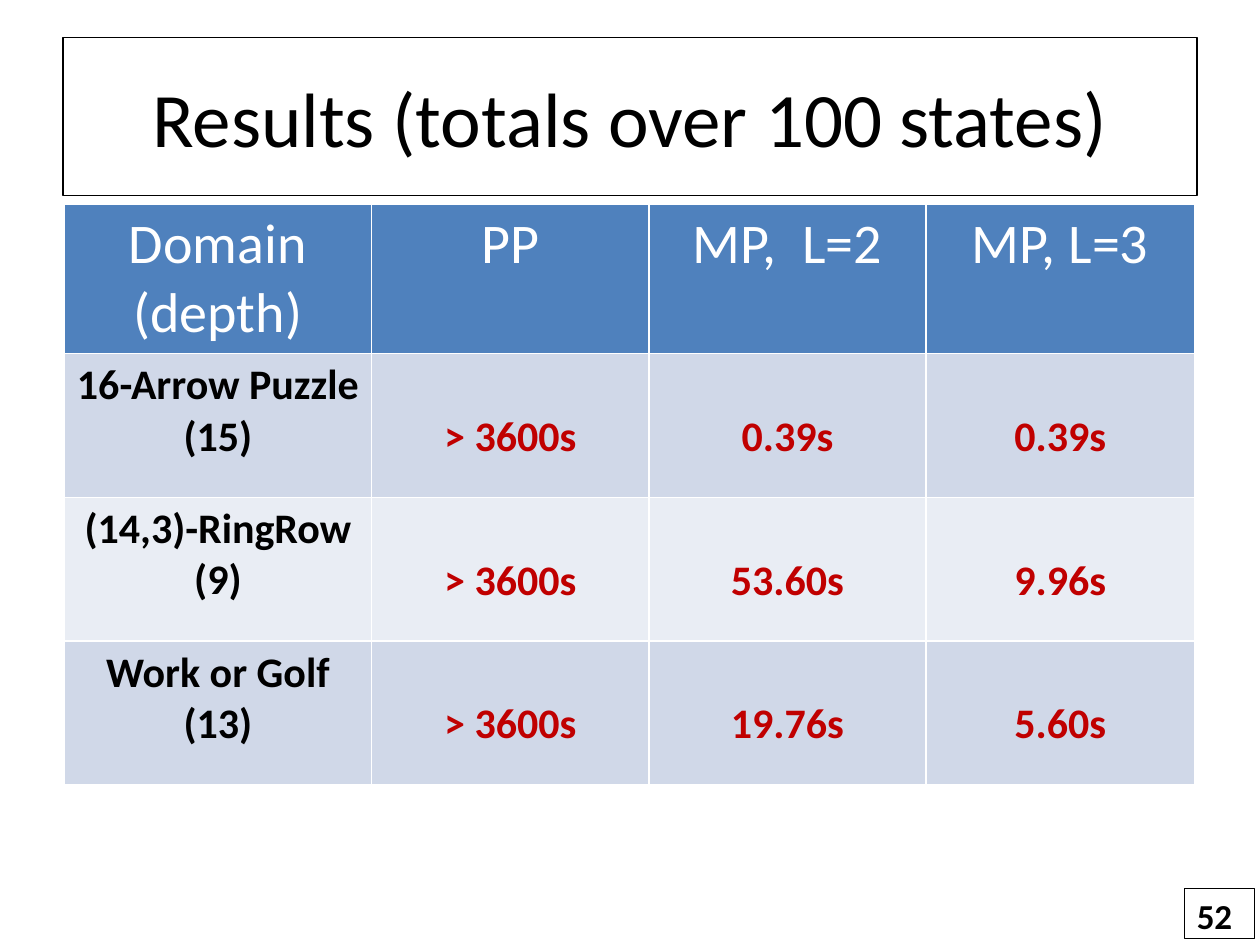
from pptx import Presentation
from pptx.dml.color import RGBColor
from pptx.enum.shapes import MSO_SHAPE
from pptx.enum.text import MSO_ANCHOR, PP_ALIGN
from pptx.util import Inches, Pt

COLORS = {
    "text": "000000",
    "header_text": "FFFFFF",
    "time": "C00000",
    "header": "4F81BD",
    "odd_row": "D0D8E8",
    "even_row": "E9EDF4",
}
ROWS = [
    ["Domain (depth)", "PP", "MP,  L=2", "MP, L=3"],
    ["16-Arrow Puzzle (15)", "> 3600s", "0.39s", "0.39s"],
    ["(14,3)-RingRow (9)", "> 3600s", "53.60s", "9.96s"],
    ["Work or Golf (13)", "> 3600s", "19.76s", "5.60s"],
]
COLUMN_WIDTHS = [2.44, 2.2, 2.2, 2.13]
ROW_HEIGHT = 1.14


def write(frame, text, size, color, bold=False, align=PP_ALIGN.CENTER):
    frame.text = text
    para = frame.paragraphs[0]
    para.alignment = align
    font = para.runs[0].font
    font.name = "Calibri"
    font.size = Pt(size)
    font.bold = bold
    font.color.rgb = RGBColor.from_string(COLORS[color])


def outline(shape):
    shape.line.color.rgb = RGBColor.from_string(COLORS["text"])
    shape.line.width = Pt(0.75)


deck = Presentation()
deck.slide_width, deck.slide_height = Inches(10), Inches(7.5)
page = deck.slides.add_slide(deck.slide_layouts[5])

# Title
title = page.shapes.title
title.left, title.top = Inches(0.5), Inches(0.3)
title.width, title.height = Inches(9), Inches(1.25)
title.text_frame.vertical_anchor = MSO_ANCHOR.MIDDLE
write(title.text_frame, "Results (totals over 100 states)", 44, "text")
outline(title)

# Results table
table = page.shapes.add_table(
    len(ROWS), len(COLUMN_WIDTHS), Inches(0.51), Inches(1.62),
    Inches(sum(COLUMN_WIDTHS)), Inches(ROW_HEIGHT * len(ROWS)),
).table
for column, width in zip(table.columns, COLUMN_WIDTHS):
    column.width = Inches(width)

for r, values in enumerate(ROWS):
    table.rows[r].height = Inches(ROW_HEIGHT)
    fill = "header" if r == 0 else "odd_row" if r % 2 else "even_row"
    for c, value in enumerate(values):
        cell = table.cell(r, c)
        cell.fill.solid()
        cell.fill.fore_color.rgb = RGBColor.from_string(COLORS[fill])
        if r == 0:
            write(cell.text_frame, value, 32, "header_text")
        elif c == 0:
            write(cell.text_frame, value, 24, "text", bold=True)
        else:
            # Times line up with the second line of the domain name
            cell.margin_top = Inches(0.46)
            write(cell.text_frame, value, 24, "time", bold=True)

# Page number
number = page.shapes.add_shape(
    MSO_SHAPE.RECTANGLE, Inches(9.4), Inches(7.05), Inches(0.56), Inches(0.4))
number.shadow.inherit = False
number.fill.background()
outline(number)
number.text_frame.word_wrap = False
number.text_frame.vertical_anchor = MSO_ANCHOR.TOP
write(number.text_frame, "52", 20, "text", bold=True, align=PP_ALIGN.LEFT)

deck.save("out.pptx")
